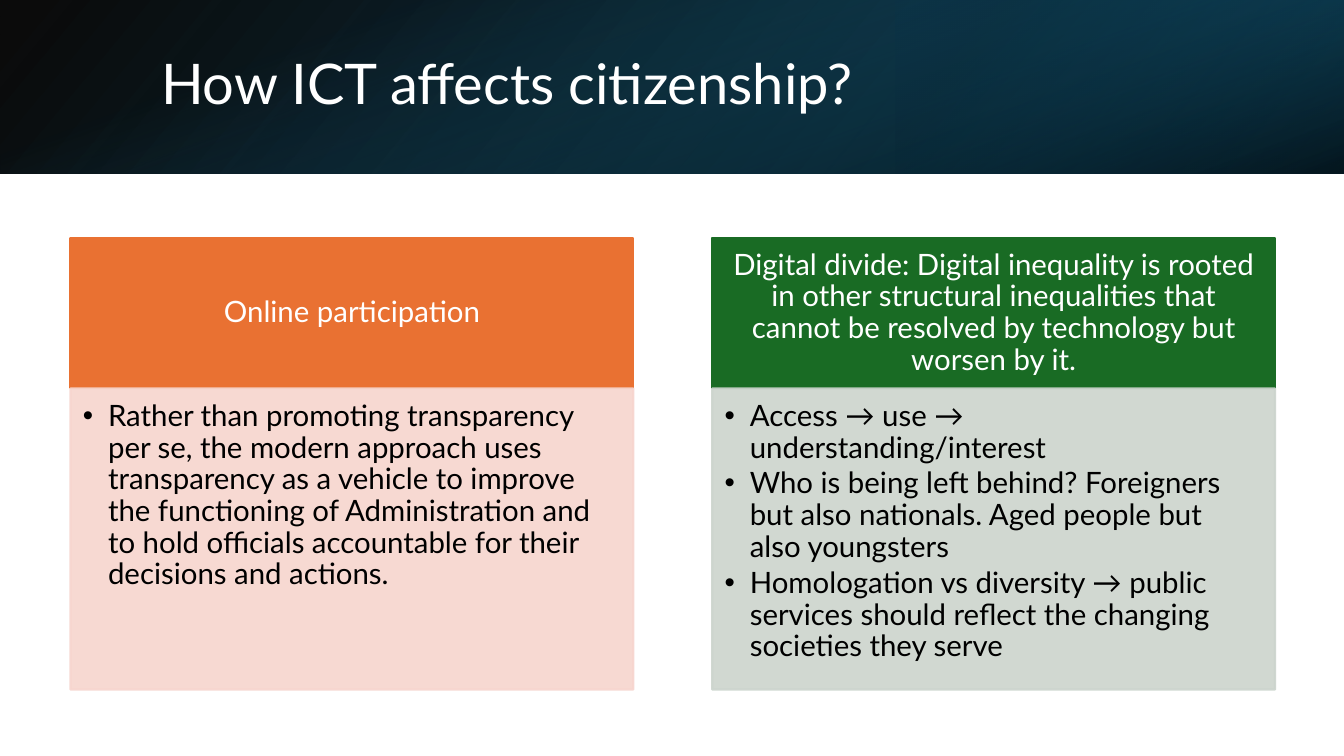
from lxml import etree
from pptx import Presentation
from pptx import util as u
from pptx.dml.color import RGBColor
from pptx.enum import shapes, text
from pptx.oxml import ns

WHITE = RGBColor(0xFF, 0xFF, 0xFF)
BLACK = RGBColor(0, 0, 0)
NIGHT = RGBColor(0x0B, 0x30, 0x41)
DEEP = RGBColor(0x10, 0x48, 0x62)
TEAL = RGBColor(0x15, 0x60, 0x82)
ORANGE = RGBColor(0xE9, 0x71, 0x32)
PEACH = RGBColor(0xF7, 0xD5, 0xCE)
GREEN = RGBColor(0x19, 0x6B, 0x24)
SAGE = RGBColor(0xCC, 0xD4, 0xCD)

FONT = "Lato"
WIDTH, HEIGHT, BANNER = 960, 540, 124
HEAD_FRAME = dict(margin_left=u.Pt(11.76), margin_right=u.Pt(11.76),
                  margin_top=u.Pt(6.72), margin_bottom=u.Pt(6.72),
                  vertical_anchor=text.MSO_ANCHOR.MIDDLE)
BODY_FRAME = dict(margin_left=u.Pt(8.82), margin_right=u.Pt(11.76),
                  margin_top=u.Pt(8.82), margin_bottom=u.Pt(13.23),
                  vertical_anchor=text.MSO_ANCHOR.TOP)
TITLE_FRAME = dict(vertical_anchor=text.MSO_ANCHOR.MIDDLE)
CENTRED = dict(alignment=text.PP_ALIGN.CENTER, line_spacing=0.9)
LISTED = dict(alignment=text.PP_ALIGN.LEFT, line_spacing=0.9, space_after=u.Pt(3))
TITLE = dict(alignment=text.PP_ALIGN.LEFT, line_spacing=0.9)

COLUMNS = [
    (ORANGE, PEACH, "Online participation",
     ["Rather than promoting transparency per se, the modern approach uses "
      "transparency as a vehicle to improve the functioning of Administration "
      "and to hold officials accountable for their decisions and actions."]),
    (GREEN, SAGE,
     "Digital divide: Digital inequality is rooted in other structural "
     "inequalities that cannot be resolved by technology but worsen by it.",
     ["Access → use → understanding/interest",
      "Who is being left behind? Foreigners but also nationals. "
      "Aged people but also youngsters",
      "Homologation vs diversity → public services should reflect "
      "the changing societies they serve"]),
]


def apply(obj, fmt):
    """Set each attribute in fmt on obj."""
    for name, value in fmt.items():
        setattr(obj, name, value)


def add_child(parent, tag, **attrs):
    """Append a drawing element with attributes."""
    child = etree.SubElement(parent, ns.qn(tag))
    for name, value in attrs.items():
        child.set(name, str(value))
    return child


def add_rect(s, box):
    """Add a plain rectangle at a box given in points."""
    sp = s.shapes.add_shape(shapes.MSO_SHAPE.RECTANGLE, *map(u.Pt, box))
    sp.shadow.inherit = False
    return sp


def write(tf, lines, frame, para, size, color, bullets=False):
    """Fill a text frame with one paragraph per line."""
    tf.word_wrap = True
    apply(tf, frame)
    for i, line in enumerate(lines):
        p = tf.add_paragraph() if i else tf.paragraphs[0]
        apply(p, para)
        if bullets:
            pPr = p._p.get_or_add_pPr()
            pPr.set("marL", str(u.Pt(18)))
            pPr.set("indent", str(u.Pt(-18)))
            add_child(pPr, "a:buFont", typeface="Arial")
            add_child(pPr, "a:buChar", char="•")
        r = p.add_run()
        r.text = line
        apply(r.font, dict(name=FONT, size=u.Pt(size)))
        r.font.color.rgb = color


def gradient(s, box, stops, angle, rotation=0, flip=False):
    """Add a rectangle with a translucent linear gradient."""
    sp = add_rect(s, box)
    sp.rotation = rotation
    sp.line.fill.background()
    spPr = sp._element.spPr
    if flip:
        spPr.find(ns.qn("a:xfrm")).set("flipH", "1")
    sp.fill.gradient()
    grad = spPr.find(ns.qn("a:gradFill"))
    for child in list(grad):
        grad.remove(child)
    gsLst = add_child(grad, "a:gsLst")
    for pos, color, alpha in stops:
        gs = add_child(gsLst, "a:gs", pos=pos * 1000)
        clr = add_child(gs, "a:srgbClr", val=color)
        add_child(clr, "a:alpha", val=alpha * 1000)
    add_child(grad, "a:lin", ang=angle * 60000, scaled=0)


def banner(s, x, y, w, h):
    """Draw the shaded banner and its title."""
    gradient(s, (x, y, w, h), [(0, BLACK, 96), (100, DEEP, 100)], 140, flip=True)
    gradient(s, (x + w * 2 / 3, y, w / 3, h),
             [(19, NIGHT, 68), (100, TEAL, 79)], 320, 180, True)
    gradient(s, (x + (w - h) / 2, y + (h - w) / 2, h, w),
             [(23, TEAL, 0), (99, BLACK, 74)], 340, 90)
    tb = s.shapes.add_textbox(*map(u.Pt, (x + 108, y + 27.5, w - 169, 69)))
    write(tb.text_frame, ["How ICT affects citizenship?"], TITLE_FRAME, TITLE, 40, WHITE)


def panel(s, box, color, alpha):
    """Add a filled and outlined panel with a given opacity."""
    sp = add_rect(s, box)
    sp.fill.solid()
    sp.fill.fore_color.rgb = color
    sp.line.color.rgb = color
    sp.line.width = u.Pt(1.5)
    if alpha < 100:
        for clr in sp._element.spPr.iter(ns.qn("a:srgbClr")):
            add_child(clr, "a:alpha", val=alpha * 1000)
    return sp.text_frame


def column(s, x, y, w, h, head_color, body_color, heading, points):
    """Draw a heading panel above a bulleted panel twice as tall."""
    head = h / 3
    write(panel(s, (x, y, w, head), head_color, 100), [heading],
          HEAD_FRAME, CENTRED, 21, WHITE)
    write(panel(s, (x, y + head, w, h - head), body_color, 90), points,
          BODY_FRAME, LISTED, 21, BLACK, True)


def main():
    """Build the slide and save it."""
    prs = Presentation()
    prs.slide_width, prs.slide_height = u.Pt(WIDTH), u.Pt(HEIGHT)
    s = prs.slides.add_slide(prs.slide_layouts[6])
    banner(s, 0, 0, WIDTH, BANNER)
    for i, content in enumerate(COLUMNS):
        column(s, 50.4 + i * 458.4, 170, 402, 322.5, *content)
    prs.save("out.pptx")


if __name__ == "__main__":
    main()
